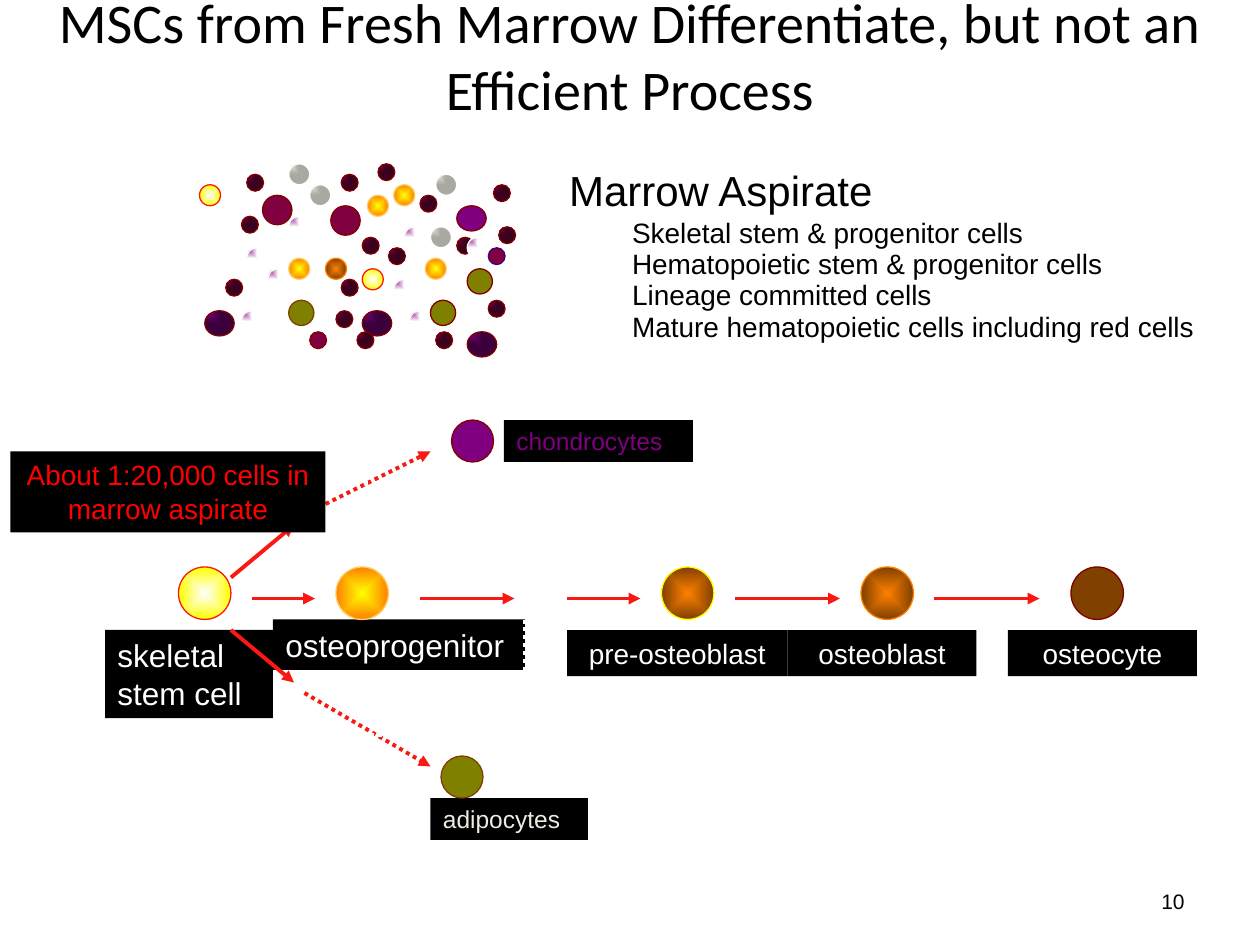
import pptx
import pptx.util
import pptx.dml.color
import pptx.enum.dml
import pptx.enum.shapes
import pptx.enum.text
import pptx.oxml.ns
import lxml.etree

THEME = {
    "black": "000000", "white": "FFFFFF", "red": "FF0000", "arrow": "F91812",
    "purple": "800080", "cream": "EEECE1",
    "heading font": "Calibri", "body font": "Arial",
    "title": 32, "heading": 24, "large": 18, "text": 16, "small": 14, "number": 12,
    "cell line": 0.75, "heavy line": 2.25,
}

TITLE = "MSCs from Fresh Marrow Differentiate, but not an Efficient Process"
ASPIRATE = "Marrow Aspirate"
CONTENTS = [
    "Skeletal stem & progenitor cells",
    "Hematopoietic stem & progenitor cells",
    "Lineage committed cells",
    "Mature hematopoietic cells including red cells",
]
PAGE_NUMBER = "10"

CELL_STYLES = {
    "stem": (("FFFFFF", "FFFF00"), "center", "F91812"),
    "progenitor": (("FFFF00", "FF8000"), "center", "FFCC66"),
    "pre-osteoblast": (("FF8000", "804000"), "center", "FFFF00"),
    "osteoblast": (("FF8000", "804000"), "center", "FF8000"),
    "osteocyte": (("804000",), None, "800000"),
    "chondrocyte": (("800080",), None, "800000"),
    "adipocyte": (("808000",), None, "804000"),
    "young adipocyte": (("808000",), None, "800000"),
    "committed": (("800040",), None, "800000"),
    "purple-edged": (("800040",), None, "400080"),
    "megakaryocyte": (("800080", "3B003B"), "corner", "800000"),
    "red": (("800040", "3B001E"), "corner", "800000"),
    "platelet": (("800080", "FFFFFF"), "corner", "FFFFFF"),
    "white": (("EEECE1", "AAA9A1"), "corner", "FFFFFF"),
}

MARROW_ORIGIN = (19, 15.6)
MARROW = [
    ("osteoblast", 2, 2, [(12, 9)]),
    ("progenitor", 2, 2, [(18.5, 2), (8.5, 9), (21.5, 9), (16, 3)]),
    ("young adipocyte", 2.4, 2.4, [(25.5, 10), (22, 13)]),
    ("adipocyte", 2.4, 2.4, [(8.5, 13)]),
    ("committed", 2.8, 2.8, [(12.5, 4), (6, 3)]),
    ("committed", 1.6, 1.6, [(10.5, 16)]),
    ("purple-edged", 1.6, 1.6, [(27.5, 8)]),
    ("chondrocyte", 2.8, 2.4, [(24.5, 4)]),
    ("megakaryocyte", 2.8, 2.4, [(25.5, 16), (0.5, 14), (15.5, 14)]),
    ("red", 1.6, 1.6, [
        (28, 2), (24.5, 7), (27.5, 13), (4.5, 1), (17, 0), (13.5, 1), (2.5, 11), (22.5, 16),
        (13, 14), (13.5, 11), (15.5, 7), (28.5, 6), (4, 5), (15, 16), (21, 3), (18, 8)]),
    ("platelet", 2, 2, [
        (18.5, 11), (4, 14), (4.5, 8), (19.5, 6), (8.5, 5), (6.5, 10), (20, 14), (25.5, 7)]),
    ("white", 2, 2, [(22.5, 1), (8.5, 0), (10.5, 2), (22, 6)]),
    ("stem", 2, 2, [(15.5, 10), (0, 2)]),
]

LINEAGE = [
    ("pre-osteoblast", 5, 5, [(63, 54)]),
    ("osteocyte", 5, 5, [(102, 54)]),
    ("osteoblast", 5, 5, [(82, 54)]),
    ("stem", 5, 5, [(17, 54)]),
    ("progenitor", 5, 5, [(32, 54)]),
    ("chondrocyte", 4, 4, [(43, 40)]),
    ("adipocyte", 4, 4, [(42, 72)]),
]
LABELS = [
    ("pre-osteoblast", (54, 60, 21, 4.4), "text", "white", "CENTER"),
    ("osteoblast", (75, 60, 18, 4.4), "text", "white", "CENTER"),
    ("osteocyte", (96, 60, 18, 4.4), "text", "white", "CENTER"),
    ("skeletal stem cell", (10, 60, 16, 8.4), "large", "white", "LEFT"),
    ("osteoprogenitor", (26, 59, 24, 4.8), "large", "white", "LEFT"),
    ("chondrocytes", (48, 40, 18, 4), "small", "purple", "LEFT"),
    ("adipocytes", (41, 76, 15, 4), "small", "cream", "LEFT"),
]
CAPTION = ("About 1:20,000 cells in marrow aspirate", (1, 43, 30, 7.7), "text", "red", "CENTER")
FRAME = (5, 46, 45, 24)
STEPS = [(24, 30), (40, 49), (54, 61), (70, 80), (89, 99)]
STEP_ROW = 57
SOLID_ARROWS = [(start, STEP_ROW, end, STEP_ROW) for start, end in STEPS]
SOLID_ARROWS += [(22, 55, 28, 50), (22, 60, 28, 65)]
DOTTED_ARROWS = [(29, 49, 41, 43), (29, 66, 41, 73)]

presentation = pptx.Presentation()
presentation.slide_width = pptx.util.Inches(10)
presentation.slide_height = pptx.util.Inches(7.5)
UNIT = presentation.slide_width / 120
slide = presentation.slides.add_slide(presentation.slide_layouts[1])
shapes = slide.shapes
qn = pptx.oxml.ns.qn
SHAPE = pptx.enum.shapes.MSO_SHAPE
DOTTED = pptx.enum.dml.MSO_LINE.ROUND_DOT


def grid(*lengths):
    return [round(length * UNIT) for length in lengths]


def rgb(value):
    return pptx.dml.color.RGBColor.from_string(value)


def add_text(paragraph, text, size, color="black", align="LEFT", font="body font"):
    paragraph.alignment = getattr(pptx.enum.text.PP_ALIGN, align)
    run = paragraph.add_run()
    run.text = text
    run.font.name = THEME[font]
    run.font.size = pptx.util.Pt(THEME[size])
    run.font.color.rgb = rgb(THEME[color])


def place(shape, box):
    shape.left, shape.top, shape.width, shape.height = grid(*box)


def set_line(shape, color, width):
    shape.line.color.rgb = rgb(color)
    shape.line.width = pptx.util.Pt(THEME[width])


def fill_cell(shape, colors, focus):
    if focus is None:
        shape.fill.solid()
        shape.fill.fore_color.rgb = rgb(colors[0])
        return
    shape.fill.gradient()
    for stop, color in zip(shape.fill.gradient_stops, colors):
        stop.color.rgb = rgb(color)
    gradient = shape._element.spPr.find(qn("a:gradFill"))
    gradient.remove(gradient.find(qn("a:lin")))
    centered = focus == "center"
    route = lxml.etree.SubElement(gradient, qn("a:path"), {"path": "shape" if centered else "rect"})
    near, far = ("50000", "50000") if centered else ("0", "100000")
    lxml.etree.SubElement(route, qn("a:fillToRect"), {"l": near, "t": near, "r": far, "b": far})


def add_cells(groups, origin=(0, 0)):
    for kind, width, height, spots in groups:
        colors, focus, edge = CELL_STYLES[kind]
        for column, row in spots:
            box = grid(origin[0] + column, origin[1] + row, width, height)
            cell = shapes.add_shape(SHAPE.OVAL, *box)
            cell.shadow.inherit = False
            fill_cell(cell, colors, focus)
            set_line(cell, edge, "cell line")


def add_label(text, box, size, color, align):
    label = shapes.add_shape(SHAPE.RECTANGLE, *grid(*box))
    label.shadow.inherit = False
    label.fill.solid()
    label.fill.fore_color.rgb = rgb(THEME["black"])
    label.line.fill.background()
    label.text_frame.word_wrap = True
    label.text_frame.vertical_anchor = pptx.enum.text.MSO_ANCHOR.TOP
    add_text(label.text_frame.paragraphs[0], text, size, color, align)


def add_arrow(ends, dotted=False):
    arrow = shapes.add_connector(pptx.enum.shapes.MSO_CONNECTOR.STRAIGHT, *grid(*ends))
    set_line(arrow, THEME["arrow"], "heavy line")
    if dotted:
        arrow.line.dash_style = DOTTED
    properties = arrow._element.spPr
    lxml.etree.SubElement(properties.find(qn("a:ln")), qn("a:tailEnd"), {"type": "triangle"})
    lxml.etree.SubElement(properties, qn("a:effectLst"))


title = shapes.title
place(title, (0, -2.28, 120, 15))
title.text_frame.vertical_anchor = pptx.enum.text.MSO_ANCHOR.MIDDLE
add_text(title.text_frame.paragraphs[0], TITLE, "title", align="CENTER", font="heading font")

body = slide.placeholders[1]
place(body, (53, 15.1, 64, 19.2))
body.text_frame.auto_size = pptx.enum.text.MSO_AUTO_SIZE.NONE
for index, text in enumerate([ASPIRATE] + CONTENTS):
    paragraph = body.text_frame.add_paragraph() if index else body.text_frame.paragraphs[0]
    paragraph.level = min(index, 1)
    paragraph.space_before = pptx.util.Pt(8.3 if index else 0)
    paragraph.line_spacing = 0.5 if index else 1.0
    add_text(paragraph, text, "text" if index else "heading")
    properties = paragraph._element.get_or_add_pPr()
    properties.set("marL", str(pptx.util.Inches(0.5 * paragraph.level)))
    properties.set("indent", "0")
    lxml.etree.SubElement(properties, qn("a:buNone"))

for label in LABELS:
    add_label(*label)
for ends in SOLID_ARROWS:
    add_arrow(ends)
for ends in DOTTED_ARROWS:
    add_arrow(ends, dotted=True)
add_cells(LINEAGE)

frame = shapes.add_shape(SHAPE.RECTANGLE, *grid(*FRAME))
frame.shadow.inherit = False
frame.fill.background()
set_line(frame, THEME["white"], "heavy line")
frame.line.dash_style = DOTTED
add_label(*CAPTION)
add_cells(MARROW, MARROW_ORIGIN)

number = shapes.add_textbox(*grid(86, 83.4, 28, 4.8))
number.text_frame.word_wrap = True
number.text_frame.vertical_anchor = pptx.enum.text.MSO_ANCHOR.MIDDLE
add_text(number.text_frame.paragraphs[0], PAGE_NUMBER, "number", align="RIGHT")

presentation.save("out.pptx")
